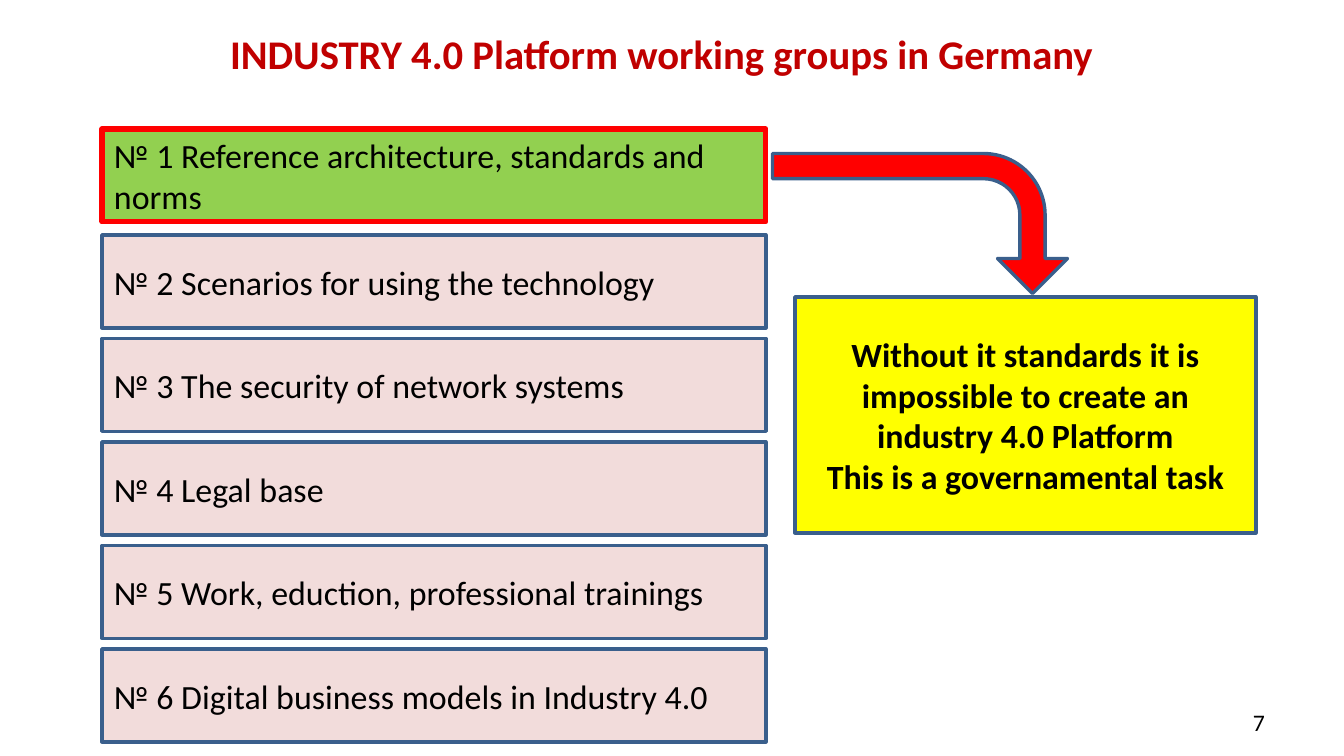
import pptx
import pptx.util
import pptx.dml.color
import pptx.enum.shapes
import pptx.enum.text

TITLE = "INDUSTRY 4.0 Platform working groups in Germany"
GROUPS = [
    "№ 1 Reference architecture, standards and norms",
    "№ 2 Scenarios for using the technology",
    "№ 3 The security of network systems",
    "№ 4 Legal base",
    "№ 5 Work, eduction, professional trainings",
    "№ 6 Digital business models in Industry 4.0",
]
NOTE = [
    "Without it standards it is impossible to create an industry 4.0 Platform",
    "This is a governamental task",
]
NUMBER = "7"

COLORS = {
    "title": "C00000", "text": "000000", "edge": "3A5F8C", "red": "FF0000",
    "green": "92D050", "pink": "F2DCDB", "yellow": "FFFF00",
}
FONT = "Calibri"
PX = 914400 / 122
LEFT, WIDTH, HEIGHT = 102, 664, 93
FIRST, SECOND, LAST = 129, 235, 649

SHAPES = pptx.enum.shapes.MSO_SHAPE
ALIGN = pptx.enum.text.PP_ALIGN


def emu(*sizes):
    return [pptx.util.Emu(round(size * PX)) for size in sizes]


def color(name):
    return pptx.dml.color.RGBColor.from_string(COLORS[name])


def write(shape, *lines, size=20, ink="text", bold=False, align=ALIGN.LEFT):
    frame = shape.text_frame
    frame.word_wrap = True
    frame.auto_size = pptx.enum.text.MSO_AUTO_SIZE.NONE
    frame.vertical_anchor = pptx.enum.text.MSO_ANCHOR.MIDDLE
    frame.text = "\n".join(lines)
    for para in frame.paragraphs:
        para.alignment = align
        font = para.runs[0].font
        font.name, font.size, font.bold = FONT, pptx.util.Pt(size), bold
        font.color.rgb = color(ink)


def draw(kind, box, fill, edge="edge", weight=2):
    shape = slide.shapes.add_shape(kind, *emu(*box))
    shape.shadow.inherit = False
    shape.fill.solid()
    shape.fill.fore_color.rgb = color(fill)
    shape.line.color.rgb = color(edge)
    shape.line.width = pptx.util.Pt(weight)
    return shape


deck = pptx.Presentation()
deck.slide_width, deck.slide_height = emu(1344, 756)
slide = deck.slides.add_slide(deck.slide_layouts[5])

title = slide.shapes.title
title.left, title.top, title.width, title.height = emu(46, 11, 1231, 84)
write(title, TITLE, size=24, ink="title", bold=True, align=ALIGN.CENTER)

# The first group stands apart; the others are evenly spaced below it.
step = (LAST - SECOND) / (len(GROUPS) - 2)
for index, group in enumerate(GROUPS):
    if index == 0:
        top, style = FIRST, {"fill": "green", "edge": "red", "weight": 3}
    else:
        top, style = SECOND + (index - 1) * step, {"fill": "pink"}
    write(draw(SHAPES.RECTANGLE, (LEFT, top, WIDTH, HEIGHT), **style), group)

arrow = draw(SHAPES.BENT_ARROW, (850, 76, 140, 295), "red")
arrow.rotation = 90
for index, value in enumerate((0.18, 0.25, 0.25, 0.44)):
    arrow.adjustments[index] = value

note = draw(SHAPES.RECTANGLE, (795, 297, 461, 236), "yellow")
write(note, *NOTE, bold=True, align=ALIGN.CENTER)

number = slide.shapes.add_textbox(*emu(964, 702, 313, 40))
write(number, NUMBER, size=14, align=ALIGN.RIGHT)

deck.save("out.pptx")
